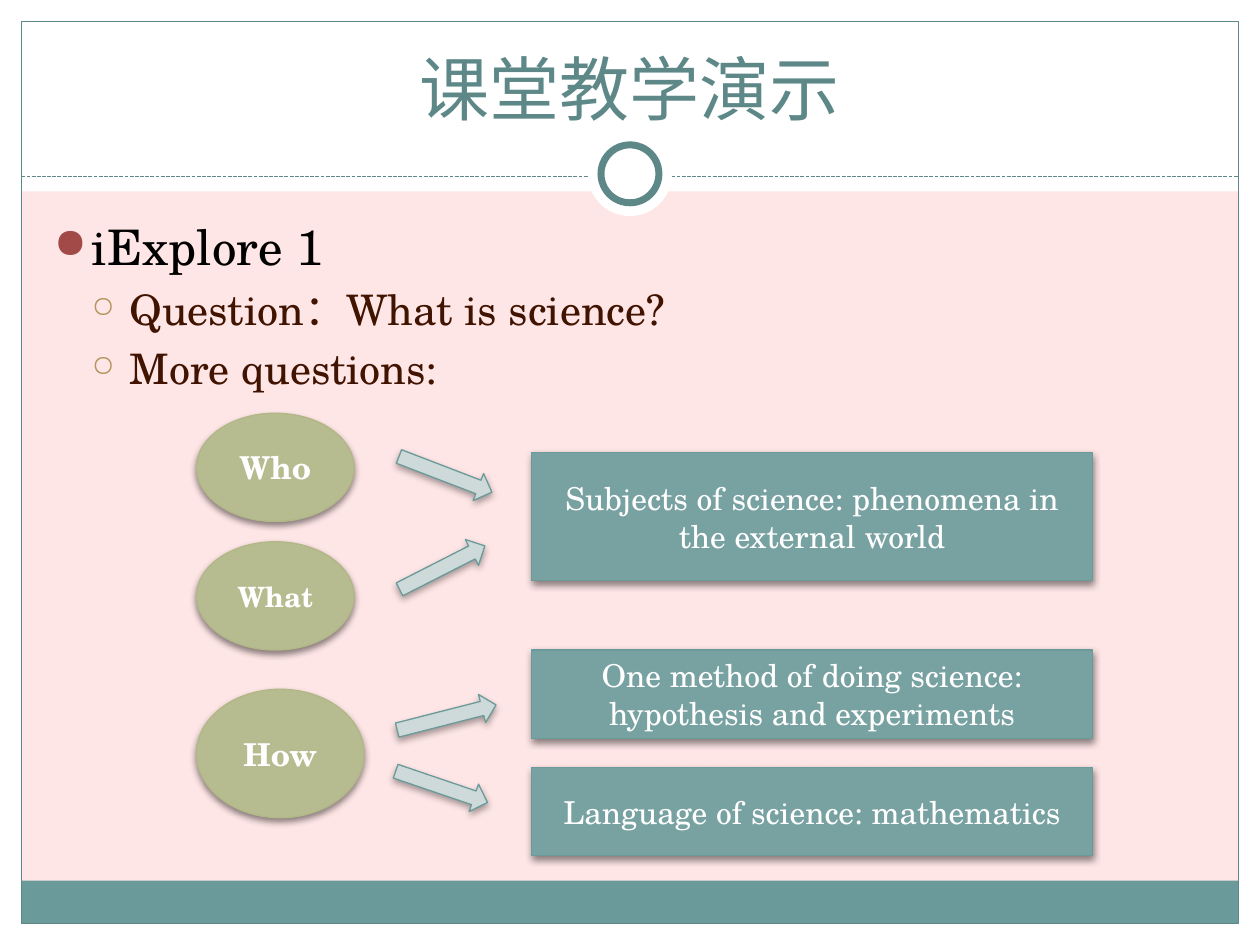
from lxml import etree
from pptx import Presentation
from pptx.dml.color import RGBColor
from pptx.enum import dml, shapes, text
from pptx.oxml import parse_xml
from pptx.oxml.ns import nsdecls, qn
from pptx.util import Inches, Pt

FONT = "TeX Gyre Schola"
WHITE, TEAL, EDGE = "FFFFFF", "5E8888", "6A9A9A"
KIND = shapes.MSO_SHAPE
RECT, OVAL, ARROW = KIND.RECTANGLE, KIND.OVAL, KIND.RIGHT_ARROW
WIDE, HIGH, RIM = 10, 7.5, 0.17

TITLE = "课堂教学演示"
# text, size, colour, level, bullet, bullet colour, bullet percent
LINES = [
    ("iExplore 1", 28, "000000", 0, "●", "A24A48", 85),
    ("Question：What is science?", 24, "411401", 1, "○", "B2935C", 70),
    ("More questions:", 24, "411401", 1, "○", "B2935C", 70),
]
# text, top, height
BOXES = [
    ("Subjects of science: phenomena in the external world", 3.59, 1.02),
    ("One method of doing science: hypothesis and experiments", 5.16, 0.7),
    ("Language of science: mathematics", 6.09, 0.7),
]
# text, top, width, height, size
OVALS = [
    ("Who", 3.28, 1.25, 0.86, 18),
    ("What", 4.3, 1.25, 0.86, 16),
    ("How", 5.47, 1.33, 1.02, 18),
]
# left, top, width, turn
ARROWS = [
    (3.14, 3.65, 0.79, 21),
    (3.13, 4.39, 0.76, 333),
    (3.14, 5.58, 0.81, 345.7),
    (3.12, 6.13, 0.77, 18.8),
]
PANELS = [
    (0, HIGH - RIM, WIDE, RIM, WHITE),
    (0, 0, WIDE, 1.52, WHITE),
    (0, 0, RIM, HIGH, WHITE),
    (WIDE - RIM, 0, RIM, HIGH, WHITE),
    (RIM, 6.99, WIDE - 2 * RIM, 0.34, EDGE),
]


def hue(code):
    """Turn a hex string into a colour."""
    return RGBColor.from_string(code)


def style(run, size, code, bold=False):
    """Format one run."""
    font = run.font
    font.name, font.size, font.bold = FONT, Pt(size), bold
    font.color.rgb = hue(code)


def draw(kind, spot, fill=None, line=None, width=0.75, shade=0):
    """Add a preset shape with an optional soft shadow."""
    shape = slide.shapes.add_shape(kind, *map(Inches, spot))
    shape.shadow.inherit = False
    if fill:
        shape.fill.solid()
        shape.fill.fore_color.rgb = hue(fill)
    else:
        shape.fill.background()
    if line:
        shape.line.color.rgb = hue(line)
        shape.line.width = Pt(width)
    else:
        shape.line.fill.background()
    if shade:
        shape._element.spPr.find(qn("a:effectLst")).append(parse_xml(
            f'<a:outerShdw {nsdecls("a")} blurRad="{Pt(4)}" dist="{Pt(2)}" '
            f'dir="5400000" rotWithShape="0"><a:srgbClr val="000000">'
            f'<a:alpha val="{shade * 1000}"/></a:srgbClr></a:outerShdw>'))
    return shape


def label(shape, words, size, bold=False):
    """Write centred white text in a shape."""
    frame = shape.text_frame
    frame.word_wrap = True
    frame.vertical_anchor = text.MSO_ANCHOR.MIDDLE
    frame.text = words
    para = frame.paragraphs[0]
    para.alignment = text.PP_ALIGN.CENTER
    style(para.runs[0], size, WHITE, bold)


def bullet(para, level, mark, code, share):
    """Give a paragraph its indent and bullet."""
    props = para._p.get_or_add_pPr()
    props.set("marL", str(Inches(0.3 * (level + 1))))
    props.set("indent", str(Inches(-0.3)))
    tint = etree.SubElement(props, qn("a:buClr"))
    etree.SubElement(tint, qn("a:srgbClr"), val=code)
    etree.SubElement(props, qn("a:buSzPct"), val=str(share * 1000))
    etree.SubElement(props, qn("a:buChar"), char=mark)


deck = Presentation()
deck.slide_width, deck.slide_height = Inches(WIDE), Inches(HIGH)
slide = deck.slides.add_slide(deck.slide_layouts[5])
slide.background.fill.solid()
slide.background.fill.fore_color.rgb = hue("FFE6E6")

for *spot, fill in PANELS:
    draw(RECT, spot, fill)
draw(RECT, (RIM, RIM, WIDE - 2 * RIM, HIGH - 2 * RIM), line=TEAL)
rule = slide.shapes.add_connector(
    shapes.MSO_CONNECTOR.STRAIGHT, *map(Inches, (RIM, 1.4, WIDE - RIM, 1.4)))
rule.line.color.rgb = hue(TEAL)
rule.line.width = Pt(0.75)
rule.line.dash_style = dml.MSO_LINE.SQUARE_DOT
etree.SubElement(rule._element.spPr, qn("a:effectLst"))
for size, line in ((0.67, None), (0.46, TEAL)):
    draw(OVAL, ((WIDE - size) / 2, 1.38 - size / 2, size, size), WHITE, line, 4)

title = slide.shapes.title
slide.shapes._spTree.append(title._element)
title.left, title.top, title.width, title.height = map(
    Inches, (0.33, 0.25, 9.33, 0.83))
title.text_frame.text = TITLE
title.text_frame.vertical_anchor = text.MSO_ANCHOR.BOTTOM
title.text_frame.paragraphs[0].alignment = text.PP_ALIGN.CENTER
style(title.text_frame.paragraphs[0].runs[0], 40, TEAL)

body = slide.shapes.add_textbox(*map(Inches, (0.33, 1.67, 9.3, 1.69))).text_frame
body.word_wrap = True
body.text = "\n".join(row[0] for row in LINES)
for para, (_, size, code, level, *mark) in zip(body.paragraphs, LINES):
    para.level = level
    para.space_before = Pt(size * 0.2)
    bullet(para, level, *mark)
    style(para.runs[0], size, code)

for words, top, high in BOXES:
    label(draw(RECT, (4.22, top, 4.45, high), "78A1A1", EDGE, shade=45), words, 18)
for words, top, wide, high, size in OVALS:
    oval = draw(OVAL, (1.56, top, wide, high), "B7BB90", "B2B787", shade=45)
    label(oval, words, size, True)
for left, top, wide, turn in ARROWS:
    arrow = draw(ARROW, (left, top, wide, 0.23), "CED9D9", EDGE, shade=35)
    arrow.rotation = turn

deck.save("out.pptx")
